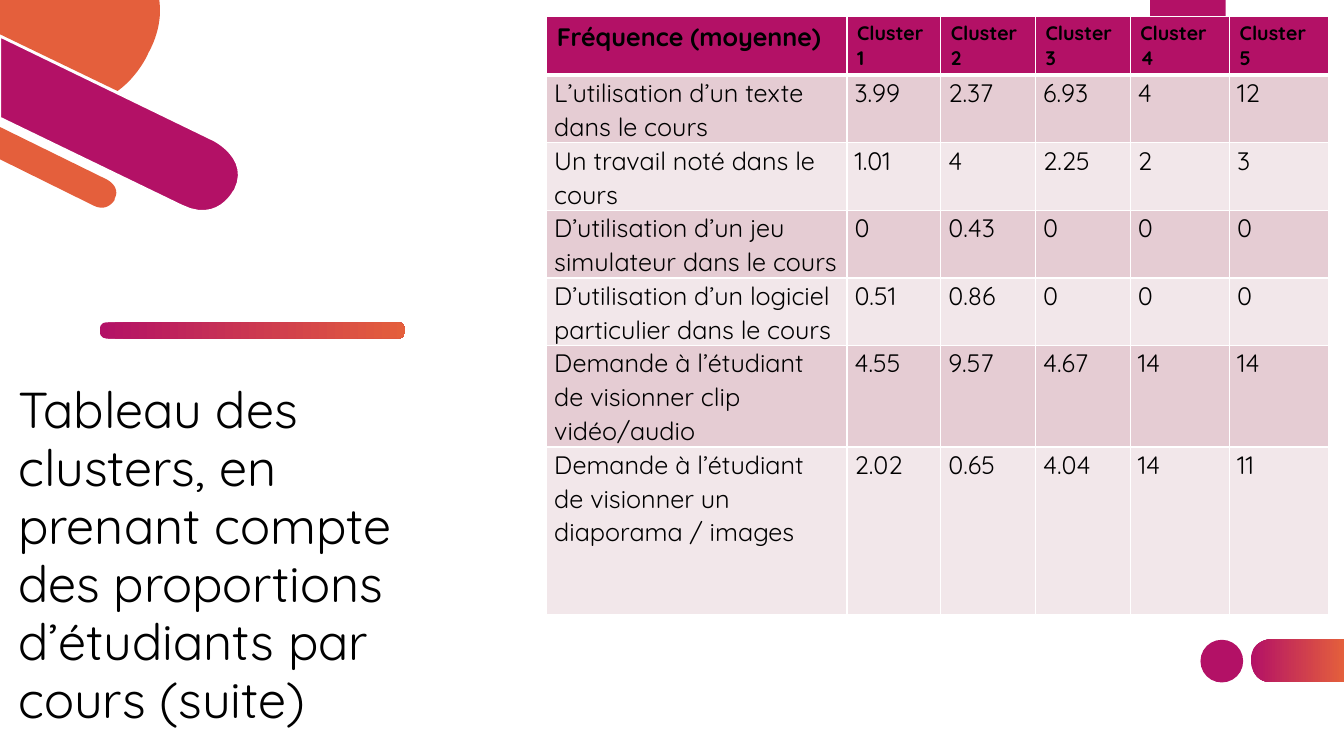
from dataclasses import dataclass

from lxml import etree
from pptx import Presentation
from pptx.dml.color import RGBColor
from pptx.enum.shapes import MSO_SHAPE
from pptx.enum.text import MSO_ANCHOR, MSO_AUTO_SIZE, PP_ALIGN
from pptx.oxml.ns import qn
from pptx.util import Pt

TOP, MIDDLE, BOTTOM = MSO_ANCHOR.TOP, MSO_ANCHOR.MIDDLE, MSO_ANCHOR.BOTTOM
LEFT = PP_ALIGN.LEFT
NO_AUTOFIT = MSO_AUTO_SIZE.NONE
RECTANGLE, OVAL, ROUNDED = MSO_SHAPE.RECTANGLE, MSO_SHAPE.OVAL, MSO_SHAPE.ROUNDED_RECTANGLE
TITLE_ONLY = 5


@dataclass(frozen=True)
class Theme:
    font: str = "Quicksand"
    magenta: str = "B31166"
    orange: str = "E45F3C"
    white: str = "FFFFFF"
    text: str = "000000"
    bands: tuple = ("E5CCD3", "F2E7EA")
    title_size: int = 36
    body_size: int = 18
    cluster_size: int = 14


THEME = Theme()

TITLE = "Tableau des clusters, en prenant compte des proportions d’étudiants par cours (suite)"
HEADER = ["Fréquence (moyenne)"] + [f"Cluster {number}" for number in range(1, 6)]
FREQUENCIES = [
    ("L’utilisation d’un texte dans le cours", "3.99", "2.37", "6.93", "4", "12"),
    ("Un travail noté dans le cours", "1.01", "4", "2.25", "2", "3"),
    ("D’utilisation d’un jeu simulateur dans le cours", "0", "0.43", "0", "0", "0"),
    ("D’utilisation d’un logiciel particulier dans le cours", "0.51", "0.86", "0", "0", "0"),
    ("Demande à l’étudiant de visionner clip vidéo/audio", "4.55", "9.57", "4.67", "14", "14"),
    ("Demande à l’étudiant de visionner un diaporama / images", "2.02", "0.65", "4.04", "14", "11"),
]

# Outlines in points: a pair is a corner, six numbers are a Bézier curve.
ORANGE_DISC = [(105, 40), (105, 40, 98, 55, 84, 65), (0, 24.5), (0, 0), (113.8, 0),
               (115.2, 10.8, 113.8, 23.8, 105.8, 38.2)]
MAGENTA_BAND = [(152.6, 100), (152.6, 100, 179.3, 113, 167.8, 136),
                (167, 136.8), (167, 136.8, 155.5, 159.8, 129.6, 146.9), (0, 84.2), (0, 26)]
ORANGE_BAND = [(0, 90.7), (76.3, 128.2), (76.3, 128.2, 86.4, 133.2, 82, 141.8),
               (82, 142.6), (82, 142.6, 77, 151.9, 67, 146.9), (0, 113.8)]
CORNER_PILL = [(908.6, 487.4), (960, 487.4), (960, 456.5), (908.6, 456.5),
               (908.6, 456.5, 893.5, 456.5, 893.5, 471.6),
               (893.5, 472.3, 893.5, 487.4, 908.6, 487.4)]

TABLE_LEFT, TABLE_TOP = 390.5, 11.5
COLUMN_WIDTHS = [214.5, 67, 67.7, 67.7, 71, 71]
ROW_HEIGHTS = [36.7] + [46.8] * 5 + [120]


def rgb(colour):
    return RGBColor.from_string(colour)


def paint(shape, *colours):
    """Fill with one colour, or with a left-to-right gradient of two."""
    shape.shadow.inherit = False
    shape.line.fill.background()
    if len(colours) == 1:
        shape.fill.solid()
        shape.fill.fore_color.rgb = rgb(colours[0])
        return
    shape.fill.gradient()
    shape.fill.gradient_angle = 0
    for stop, colour in zip(shape.fill.gradient_stops, colours):
        stop.color.rgb = rgb(colour)


def add_preset(slide, kind, box, *colours):
    shape = slide.shapes.add_shape(kind, *map(Pt, box))
    paint(shape, *colours)
    return shape


def flatten(outline, steps=12):
    """Turn the curves of an outline into short straight segments."""
    points = []
    for part in outline:
        if len(part) == 2:
            points.append(part)
            continue
        (x0, y0), (x1, y1, x2, y2, x3, y3) = points[-1], part
        for step in range(1, steps + 1):
            t = step / steps
            weights = ((1 - t) ** 3, 3 * t * (1 - t) ** 2, 3 * t * t * (1 - t), t ** 3)
            points.append((sum(w * x for w, x in zip(weights, (x0, x1, x2, x3))),
                           sum(w * y for w, y in zip(weights, (y0, y1, y2, y3)))))
    return points


def add_outline(slide, outline, *colours):
    start, *others = [(Pt(x), Pt(y)) for x, y in flatten(outline)]
    builder = slide.shapes.build_freeform(*start)
    builder.add_line_segments(others, close=True)
    shape = builder.convert_to_shape()
    paint(shape, *colours)
    return shape


def format_text(paragraph, size, bold, spacing=None):
    paragraph.alignment = LEFT
    paragraph.line_spacing = spacing
    for run in paragraph.runs:
        font = run.font
        font.name, font.size, font.bold = THEME.font, Pt(size), bold
        font.color.rgb = rgb(THEME.text)


def add_borders(cell, bottom_width):
    properties = cell._tc.get_or_add_tcPr()
    for side, width in (("L", 1), ("R", 1), ("T", 1), ("B", bottom_width)):
        border = etree.SubElement(properties, qn(f"a:ln{side}"), w=str(Pt(width)))
        fill = etree.SubElement(border, qn("a:solidFill"))
        etree.SubElement(fill, qn("a:srgbClr"), val=THEME.white)


def fill_cell(cell, text, row, column):
    header = row == 0
    cell.text_frame.text = text
    small = header and column > 0
    format_text(cell.text_frame.paragraphs[0],
                THEME.cluster_size if small else THEME.body_size,
                header, None if header else 1.07)
    cell.vertical_anchor = MIDDLE if small else TOP
    if not header:
        cell.margin_left = cell.margin_right = Pt(5.4)
        cell.margin_top = cell.margin_bottom = 0
    add_borders(cell, 3 if header else 1)
    cell.fill.solid()
    cell.fill.fore_color.rgb = rgb(THEME.magenta if header else THEME.bands[(row - 1) % 2])


def add_decor(slide):
    add_preset(slide, RECTANGLE, (821.5, 0, 54, 90), THEME.magenta)
    add_preset(slide, OVAL, (857.5, 457, 30.5, 30.5), THEME.magenta)
    add_outline(slide, CORNER_PILL, THEME.magenta, THEME.orange)
    add_outline(slide, ORANGE_DISC, THEME.orange)
    add_outline(slide, ORANGE_BAND, THEME.orange)
    band = add_outline(slide, MAGENTA_BAND, THEME.magenta)
    band.line.color.rgb = rgb(THEME.white)
    band.line.width = Pt(1.5)
    rule = add_preset(slide, ROUNDED, (71.3, 230.2, 218.2, 11.6), THEME.magenta, THEME.orange)
    rule.adjustments[0] = 0.4


def add_title(slide):
    title = slide.shapes.title
    title.left, title.top, title.width, title.height = map(Pt, (5.8, 180, 337, 345))
    frame = title.text_frame
    frame.text = TITLE
    frame.word_wrap = True
    frame.auto_size = NO_AUTOFIT
    frame.vertical_anchor = BOTTOM
    format_text(frame.paragraphs[0], THEME.title_size, False, 0.96)


def add_frequency_table(slide):
    rows = [HEADER, *FREQUENCIES]
    table = slide.shapes.add_table(
        len(rows), len(HEADER), Pt(TABLE_LEFT), Pt(TABLE_TOP),
        Pt(sum(COLUMN_WIDTHS)), Pt(sum(ROW_HEIGHTS))).table
    for column, width in zip(table.columns, COLUMN_WIDTHS):
        column.width = Pt(width)
    for row, height in zip(table.rows, ROW_HEIGHTS):
        row.height = Pt(height)
    for r, values in enumerate(rows):
        for c, value in enumerate(values):
            fill_cell(table.cell(r, c), value, r, c)


def main():
    presentation = Presentation()
    presentation.slide_width, presentation.slide_height = Pt(960), Pt(540)
    slide = presentation.slides.add_slide(presentation.slide_layouts[TITLE_ONLY])
    add_decor(slide)
    add_title(slide)
    add_frequency_table(slide)
    presentation.save("out.pptx")


if __name__ == "__main__":
    main()
